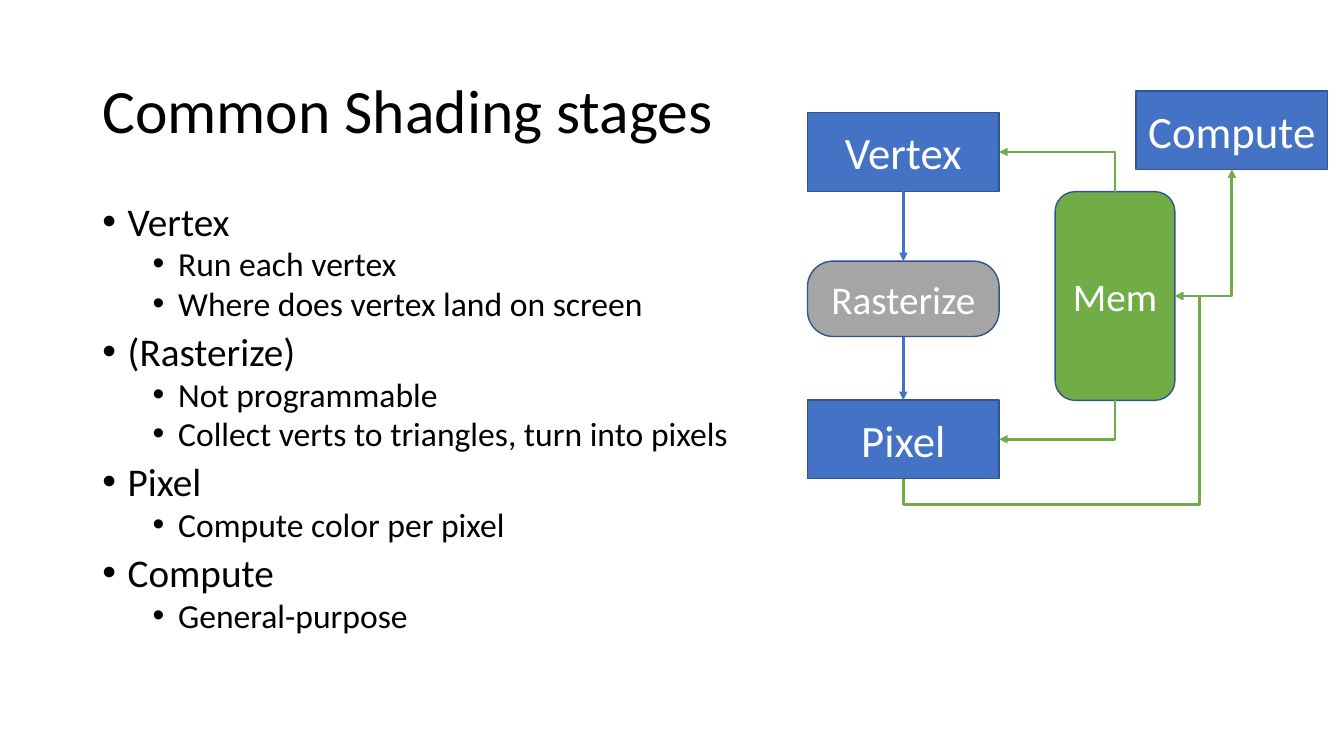
from lxml.etree import SubElement as Sub
from pptx import Presentation
from pptx.dml.color import RGBColor
from pptx.enum.shapes import MSO_CONNECTOR as Link, MSO_SHAPE as Form
from pptx.enum.text import MSO_ANCHOR as Anchor, PP_ALIGN as Align
from pptx.oxml.ns import qn
from pptx.util import Cm, Pt

BLUE, GREEN, GRAY, EDGE = "4472C4", "70AD47", "A5A5A5", "325491"
BLACK, WHITE = "000000", "FFFFFF"
TOP, LEFT, BASE, RIGHT = range(4)  # connection sites of a box

TOPICS = [
    ("Vertex", ["Run each vertex", "Where does vertex land on screen"]),
    ("(Rasterize)", ["Not programmable",
                     "Collect verts to triangles, turn into pixels"]),
    ("Pixel", ["Compute color per pixel"]),
    ("Compute", ["General-purpose"]),
]


def paint(color, value):
    color.rgb = RGBColor.from_string(value)


def add_run(para, text, size, color):
    run = para.add_run()
    run.text = text
    run.font.name = "Calibri"
    run.font.size = Pt(size)
    paint(run.font.color, color)


def add_text(slide, left, top, width, height, anchor):
    frame = slide.shapes.add_textbox(
        Cm(left), Cm(top), Cm(width), Cm(height)).text_frame
    frame.word_wrap = True
    frame.vertical_anchor = anchor
    return frame


def add_title(slide, text):
    frame = add_text(slide, 2.33, 1.02, 29.21, 3.68, Anchor.MIDDLE)
    para = frame.paragraphs[0]
    para.line_spacing = 0.9
    add_run(para, text, 44, BLACK)


def add_point(para, text, level):
    para.level = level
    para.line_spacing = 0.8
    para.space_before = Pt(5 if level else 10)
    props = para._p.get_or_add_pPr()
    props.set("marL", str(Cm(0.64 + 1.27 * level)))
    props.set("indent", str(Cm(-0.64)))
    Sub(props, qn("a:buFont"), typeface="Arial")
    Sub(props, qn("a:buChar"), char="•")
    add_run(para, text, 24 if level else 28, BLACK)


def add_list(slide, topics):
    frame = add_text(slide, 2.33, 5.08, 29.21, 12.09, Anchor.TOP)
    points = []
    for head, details in topics:
        points += [(head, 0)] + [(text, 1) for text in details]
    for i, (text, level) in enumerate(points):
        para = frame.add_paragraph() if i else frame.paragraphs[0]
        add_point(para, text, level)


def add_box(slide, text, left, top, width=4.83, height=1.98,
            fill=BLUE, form=Form.RECTANGLE, size=32):
    box = slide.shapes.add_shape(
        form, Cm(left), Cm(top), Cm(width), Cm(height))
    box.shadow.inherit = False
    box.fill.solid()
    paint(box.fill.fore_color, fill)
    paint(box.line.color, EDGE)
    box.line.width = Pt(1)
    box.text_frame.vertical_anchor = Anchor.MIDDLE
    para = box.text_frame.paragraphs[0]
    para.alignment = Align.CENTER
    add_run(para, text, size, WHITE)
    return box


def add_arrow(slide, start, end, color=GREEN, bend="bentConnector2",
              bends=(), both=False):
    """Link two (box, site) pairs; the arrowhead sits at start, or at both."""
    arrow = slide.shapes.add_connector(Link.STRAIGHT, 0, 0, 0, 0)
    arrow.begin_connect(*start)
    arrow.end_connect(*end)
    paint(arrow.line.color, color)
    arrow.line.width = Pt(2)
    line = arrow.line._get_or_add_ln()
    Sub(line, qn("a:headEnd"), type="triangle")
    if both:
        Sub(line, qn("a:tailEnd"), type="triangle")
    props = arrow._element.spPr
    Sub(props, qn("a:effectLst"))
    shape = props.find(qn("a:prstGeom"))
    shape.set("prst", bend)
    guides = shape.find(qn("a:avLst"))
    for i, share in enumerate(bends, 1):
        Sub(guides, qn("a:gd"), name=f"adj{i}",
            fmla=f"val {round(share * 100000)}")


def add_stages(slide):
    vertex = add_box(slide, "Vertex", 20.35, 2.84)
    pixel = add_box(slide, "Pixel", 20.35, 10.08)
    mem = add_box(slide, "Mem", 26.59, 4.83, 3.02, 5.26,
                  GREEN, Form.ROUNDED_RECTANGLE, 28)
    raster = add_box(slide, "Rasterize", 20.35, 6.58, height=1.9, fill=GRAY,
                     form=Form.ROUNDED_RECTANGLE, size=28)
    raster.adjustments[0] = 0.34
    compute = add_box(slide, "Compute", 28.63, 2.29)

    for lower, upper in [(raster, vertex), (pixel, raster)]:
        add_arrow(slide, (lower, TOP), (upper, BASE), BLUE, "line")
    add_arrow(slide, (vertex, RIGHT), (mem, TOP))
    add_arrow(slide, (pixel, RIGHT), (mem, BASE))
    add_arrow(slide, (mem, RIGHT), (pixel, BASE),
              bend="bentConnector4", bends=(-0.09, 1.14))
    add_arrow(slide, (mem, RIGHT), (compute, BASE), both=True)


def main():
    deck = Presentation()
    deck.slide_width, deck.slide_height = Cm(33.87), Cm(19.05)
    slide = deck.slides.add_slide(deck.slide_layouts[6])
    add_title(slide, "Common Shading stages")
    add_list(slide, TOPICS)
    add_stages(slide)
    deck.save("out.pptx")


if __name__ == "__main__":
    main()
